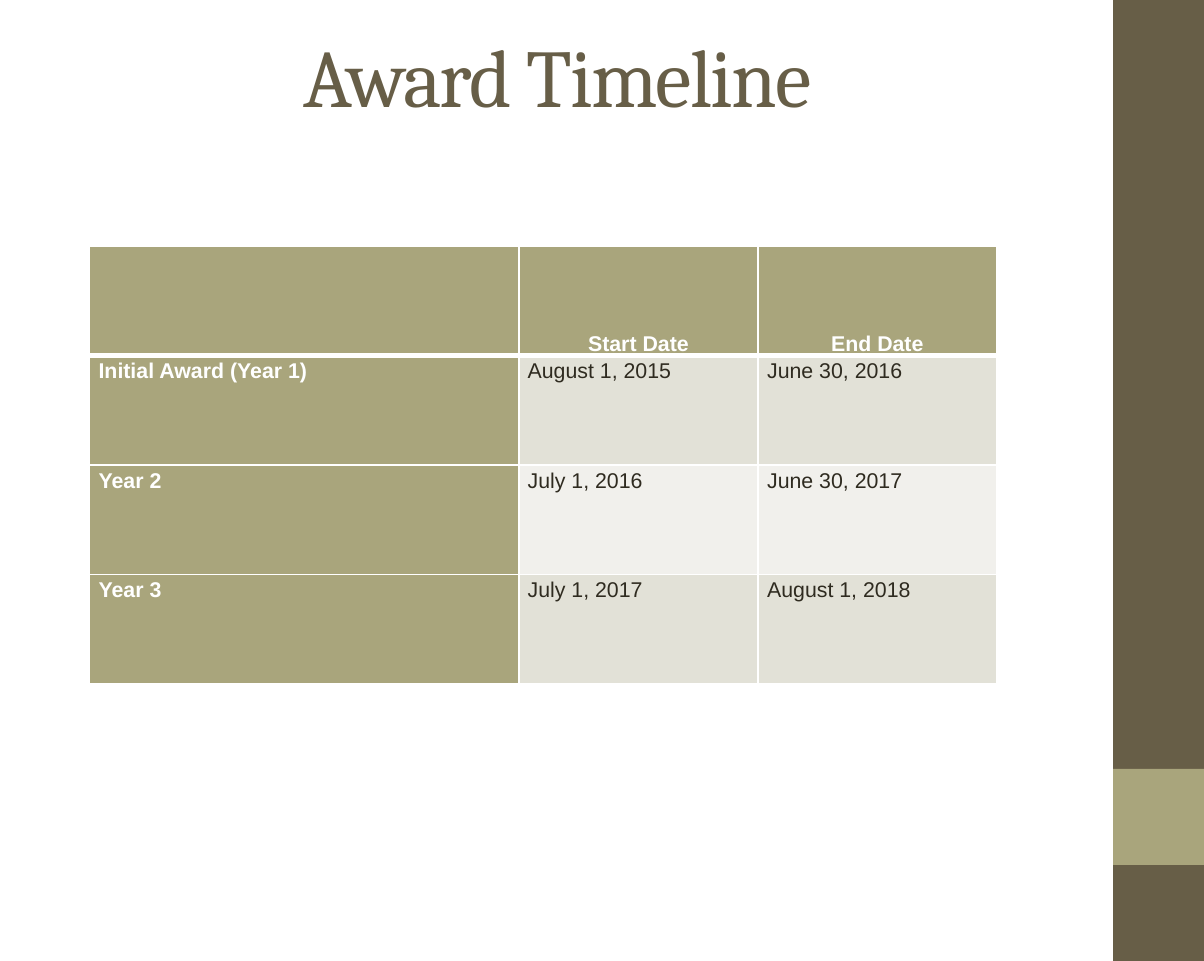
from lxml import etree
from pptx import Presentation
from pptx.dml.color import RGBColor
from pptx.enum import shapes, text
from pptx.oxml import ns
from pptx.util import Inches, Pt

BROWN = RGBColor(0x67, 0x5E, 0x47)
OLIVE = RGBColor(0xA9, 0xA5, 0x7C)
INK = RGBColor(0x2F, 0x2B, 0x20)
WHITE = RGBColor(0xFF, 0xFF, 0xFF)
BANDS = [RGBColor(0xE2, 0xE1, 0xD7), RGBColor(0xF1, 0xF0, 0xEC)]

HEADING = "Award Timeline"
TIMELINE = [
    ("", "Start Date", "End Date"),
    ("Initial Award (Year 1)", "August 1, 2015", "June 30, 2016"),
    ("Year 2", "July 1, 2016", "June 30, 2017"),
    ("Year 3", "July 1, 2017", "August 1, 2018"),
]
COLUMN_WIDTHS = [3.35, 1.87, 1.86]
ROW_HEIGHT = 0.855
SIDEBAR = [(0, 7.5, BROWN), (6, 0.75, OLIVE)]


def add_sidebar(slide):
    for top, height, color in SIDEBAR:
        band = slide.shapes.add_shape(
            shapes.MSO_SHAPE.RECTANGLE,
            Inches(8.69), Inches(top), Inches(0.71), Inches(height))
        band.shadow.inherit = False
        band.fill.solid()
        band.fill.fore_color.rgb = color
        band.line.fill.background()


def add_heading(slide):
    heading = slide.shapes.title
    heading.left, heading.top = Inches(0), Inches(-0.04)
    heading.width, heading.height = Inches(8.7), Inches(1.25)
    frame = heading.text_frame
    frame.text = HEADING
    frame.vertical_anchor = text.MSO_ANCHOR.MIDDLE
    line = frame.paragraphs[0]
    line.alignment = text.PP_ALIGN.CENTER
    font = line.runs[0].font
    font.name, font.size = "Cambria", Pt(46)
    font.color.rgb = BROWN
    line.runs[0]._r.get_or_add_rPr().set("spc", "-100")


def set_borders(cell, widths):
    properties = cell._tc.get_or_add_tcPr()
    for position, (side, width) in enumerate(widths.items()):
        border = etree.Element(ns.qn(f"a:ln{side}"), w=str(Pt(width)))
        fill = etree.SubElement(border, ns.qn("a:solidFill"))
        etree.SubElement(fill, ns.qn("a:srgbClr"), val=str(WHITE))
        properties.insert(position, border)


def format_cell(cell, label, row, column):
    is_header = row == 0
    is_heading = is_header or column == 0
    cell.fill.solid()
    cell.fill.fore_color.rgb = OLIVE if is_heading else BANDS[(row - 1) % 2]
    set_borders(cell, {"L": 1, "R": 1, "T": 3 if row == 1 else 1,
                       "B": 3 if is_header else 1})
    cell.margin_left = cell.margin_right = Inches(0.07)
    cell.margin_top = cell.margin_bottom = 0
    cell.vertical_anchor = text.MSO_ANCHOR.BOTTOM if is_header else text.MSO_ANCHOR.TOP
    cell.text_frame.text = label
    line = cell.text_frame.paragraphs[0]
    line.alignment = text.PP_ALIGN.CENTER if is_header else text.PP_ALIGN.LEFT
    line.line_spacing = 1.15
    line.space_after = Pt(10)
    for run in line.runs:
        run.font.name, run.font.size = "Arial", Pt(12)
        run.font.bold = is_heading
        run.font.color.rgb = WHITE if is_heading else INK


def add_timeline(slide):
    timeline = slide.shapes.add_table(
        len(TIMELINE), len(COLUMN_WIDTHS), Inches(0.7), Inches(1.92),
        Inches(sum(COLUMN_WIDTHS)), Inches(ROW_HEIGHT * len(TIMELINE))).table
    for column, width in zip(timeline.columns, COLUMN_WIDTHS):
        column.width = Inches(width)
    for row, labels in enumerate(TIMELINE):
        timeline.rows[row].height = Inches(ROW_HEIGHT)
        for column, label in enumerate(labels):
            format_cell(timeline.cell(row, column), label, row, column)


def main():
    deck = Presentation()
    deck.slide_width, deck.slide_height = Inches(9.4), Inches(7.5)
    slide = deck.slides.add_slide(deck.slide_layouts[5])
    add_sidebar(slide)
    add_heading(slide)
    add_timeline(slide)
    deck.save("out.pptx")


if __name__ == "__main__":
    main()
